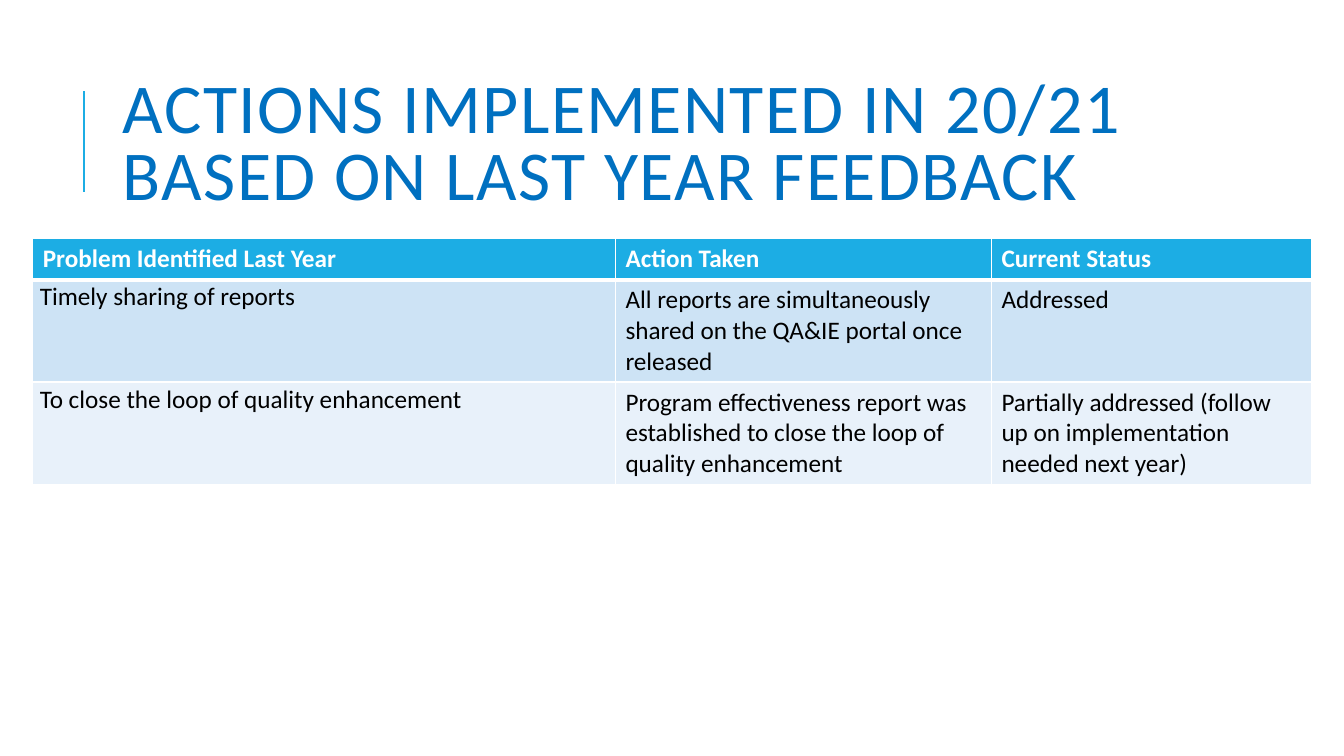
from lxml import etree
from pptx import Presentation
from pptx.dml.color import RGBColor
from pptx.enum import shapes, text
from pptx.oxml import ns
from pptx.util import Pt

FEEDBACK = [
    ("Problem Identified Last Year", "Action Taken", "Current Status"),
    ("Timely sharing of reports",
     "All reports are simultaneously shared on the QA&IE portal once released",
     "Addressed"),
    ("To close the loop of quality enhancement",
     "Program effectiveness report was established to close the loop of quality enhancement",
     "Partially addressed (follow up on implementation needed next year)"),
]


def rgb(code):
    return RGBColor.from_string(code)


class FeedbackSlide:
    FONT = "Calibri"
    ACCENT = "1CADE4"
    TITLE = "0070C0"
    WHITE = "FFFFFF"
    BLACK = "000000"
    BANDS = ("CDE3F5", "E8F1FA")

    def __init__(self, deck):
        self.slide = deck.slides.add_slide(deck.slide_layouts[5])

    def style(self, paragraph, size, color, bold=False):
        font = paragraph.font
        font.name, font.size, font.bold = self.FONT, Pt(size), bold
        font.color.rgb = rgb(color)

    def title(self, wording, left, top, width, height):
        heading = self.slide.shapes.title
        heading.left, heading.top = Pt(left), Pt(top)
        heading.width, heading.height = Pt(width), Pt(height)
        frame = heading.text_frame
        frame.text = wording
        frame.word_wrap = True
        frame.auto_size = text.MSO_AUTO_SIZE.NONE
        frame.vertical_anchor = text.MSO_ANCHOR.MIDDLE
        paragraph = frame.paragraphs[0]
        paragraph.alignment = text.PP_ALIGN.LEFT
        paragraph.line_spacing = 0.8
        self.style(paragraph, 50, self.TITLE)
        paragraph.runs[0]._r.get_or_add_rPr().set("spc", "100")

    def rule(self, x, top, bottom):
        line = self.slide.shapes.add_connector(
            shapes.MSO_CONNECTOR.STRAIGHT, Pt(x), Pt(bottom), Pt(x), Pt(top))
        line.line.color.rgb = rgb(self.ACCENT)
        line.line.width = Pt(1.5)
        etree.SubElement(line._element.spPr, ns.qn("a:effectLst"))

    def borders(self, cell, bottom):
        """Draw white cell borders, 1 pt except for the bottom one."""
        properties = cell._tc.get_or_add_tcPr()
        widths = {"lnL": 1, "lnR": 1, "lnT": 1, "lnB": bottom}
        for place, (side, width) in enumerate(widths.items()):
            edge = etree.Element(ns.qn(f"a:{side}"), w=str(Pt(width)))
            fill = etree.SubElement(edge, ns.qn("a:solidFill"))
            etree.SubElement(fill, ns.qn("a:srgbClr"), val=self.WHITE)
            properties.insert(place, edge)

    def table(self, rows, left, top, widths, heights):
        grid = self.slide.shapes.add_table(
            len(rows), len(widths), Pt(left), Pt(top),
            Pt(sum(widths)), Pt(sum(heights))).table
        for column, width in zip(grid.columns, widths):
            column.width = Pt(width)
        for r, (wordings, height) in enumerate(zip(rows, heights)):
            grid.rows[r].height = Pt(height)
            header = r == 0
            for c, wording in enumerate(wordings):
                cell = grid.cell(r, c)
                cell.text = wording
                paragraph = cell.text_frame.paragraphs[0]
                self.style(paragraph, 18, self.WHITE if header else self.BLACK, header)
                cell.fill.solid()
                cell.fill.fore_color.rgb = rgb(
                    self.ACCENT if header else self.BANDS[(r - 1) % 2])
                if c == 0 and not header:
                    cell.margin_left = cell.margin_right = Pt(5)
                    cell.margin_top = cell.margin_bottom = 0
                    paragraph.line_spacing = 1.07
                self.borders(cell, bottom=3 if header else 1)


def main():
    deck = Presentation()
    deck.slide_width, deck.slide_height = Pt(960), Pt(540)
    page = FeedbackSlide(deck)
    page.rule(60, 65, 137)
    page.title("ACTIONS IMPLEMENTED IN 20/21 BASED ON LAST YEAR FEEDBACK",
               80.6, 46, 765.4, 118)
    page.table(FEEDBACK, 23.4, 170.6, (416.2, 268.6, 228.4), (29.2, 73, 73))
    deck.save("out.pptx")


if __name__ == "__main__":
    main()
